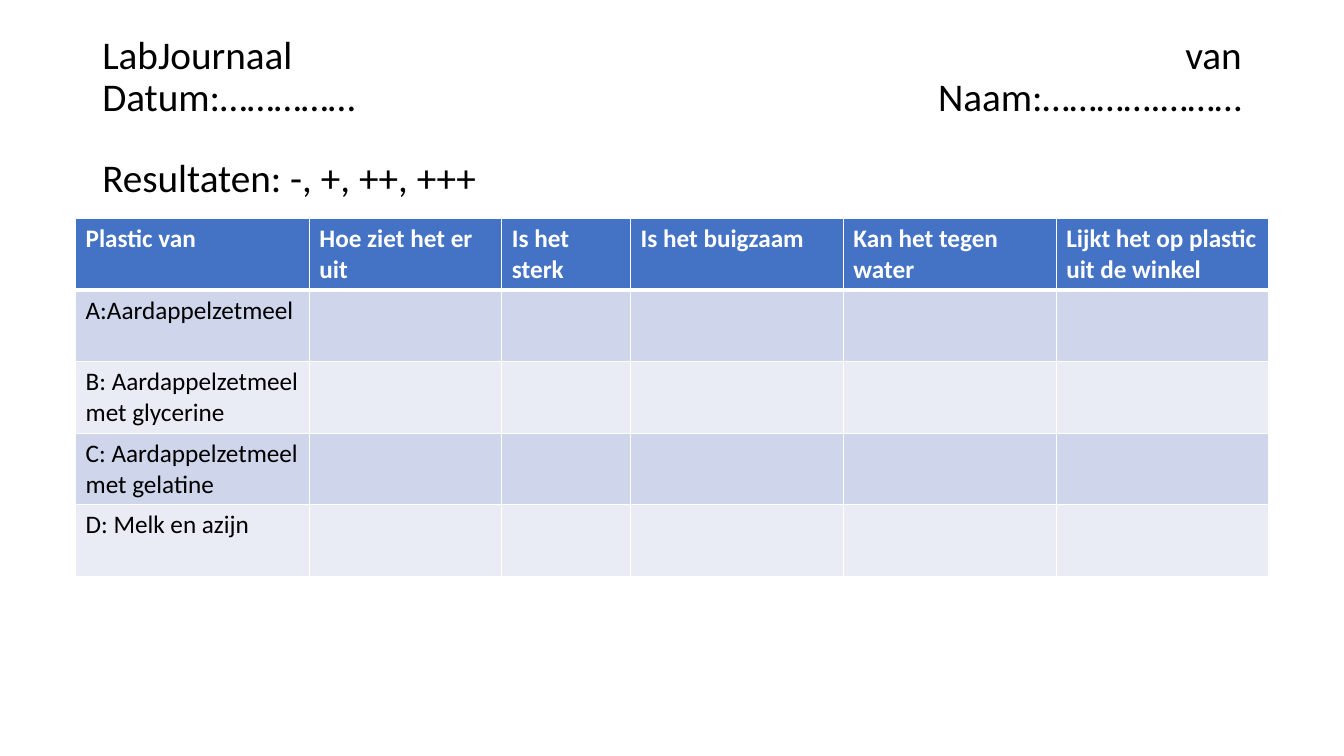
from pptx import Presentation
from pptx.dml.color import RGBColor as RGB
from pptx.enum.text import PP_ALIGN as ALIGN
from pptx.oxml import parse_xml
from pptx.oxml.ns import nsdecls
from pptx.util import Pt

FONT = "Calibri"
HUES = {"ink": "000000", "white": "FFFFFF", "head": "4472C4",
        "odd": "CFD5EA", "even": "E9EBF5"}
COLS = [167, 137.5, 92, 152, 152, 152]
HEADS = ["Plastic van", "Hoe ziet het er uit", "Is het sterk",
         "Is het buigzaam", "Kan het tegen water",
         "Lijkt het op plastic uit de winkel"]
KINDS = ["A:Aardappelzetmeel", "B: Aardappelzetmeel met glycerine",
         "C: Aardappelzetmeel met gelatine", "D: Melk en azijn"]


def style(para, size, hue, bold=False):
    """Format every run of a paragraph."""
    for run in para.runs:
        font = run.font
        font.name, font.size, font.bold = FONT, Pt(size), bold
        font.color.rgb = RGB.from_string(HUES[hue])


def add_text(slide, box, text, align):
    """Place a large text block in the given box."""
    frame = slide.shapes.add_textbox(*map(Pt, box)).text_frame
    frame.word_wrap = True
    para = frame.paragraphs[0]
    para.text = text
    para.alignment = align
    para.line_spacing = 0.9
    style(para, 28, "ink")


def add_edges(cell, top, bottom):
    """Draw white borders around a cell."""
    props = cell._tc.get_or_add_tcPr()
    for side, width in zip("LRTB", (1, 1, top, bottom)):
        props.append(parse_xml(
            f'<a:ln{side} {nsdecls("a")} w="{Pt(width)}"><a:solidFill>'
            f'<a:srgbClr val="{HUES["white"]}"/></a:solidFill></a:ln{side}>'))


def add_grid(slide, left, top, high):
    """Build the results table from its top left corner."""
    rows = [HEADS] + [[kind] + [""] * (len(HEADS) - 1) for kind in KINDS]
    table = slide.shapes.add_table(
        len(rows), len(COLS), Pt(left), Pt(top),
        Pt(sum(COLS)), Pt(high * len(rows))).table
    for col, wide in zip(table.columns, COLS):
        col.width = Pt(wide)
    for r, row in enumerate(rows):
        table.rows[r].height = Pt(high)
        fill = "head" if r == 0 else "odd" if r % 2 else "even"
        for c, text in enumerate(row):
            cell = table.cell(r, c)
            add_edges(cell, 3 if r == 1 else 1, 3 if r == 0 else 1)
            cell.fill.solid()
            cell.fill.fore_color.rgb = RGB.from_string(HUES[fill])
            if text:
                cell.text_frame.text = text
                style(cell.text_frame.paragraphs[0], 18,
                      "ink" if r else "white", r == 0)


def main():
    """Build the lab journal slide and save it."""
    deck = Presentation()
    deck.slide_width, deck.slide_height = Pt(960), Pt(540)
    slide = deck.slides.add_slide(deck.slide_layouts[6])
    add_text(slide, (66, 21.6, 828, 104.4),
             "LabJournaal van\vDatum:…………… Naam:………….………\v",
             ALIGN.JUSTIFY)
    add_text(slide, (66, 110, 828, 417.6),
             "Resultaten: -, +, ++, +++", ALIGN.LEFT)
    add_grid(slide, 54, 156.25, 51.1)
    deck.save("out.pptx")


if __name__ == "__main__":
    main()
